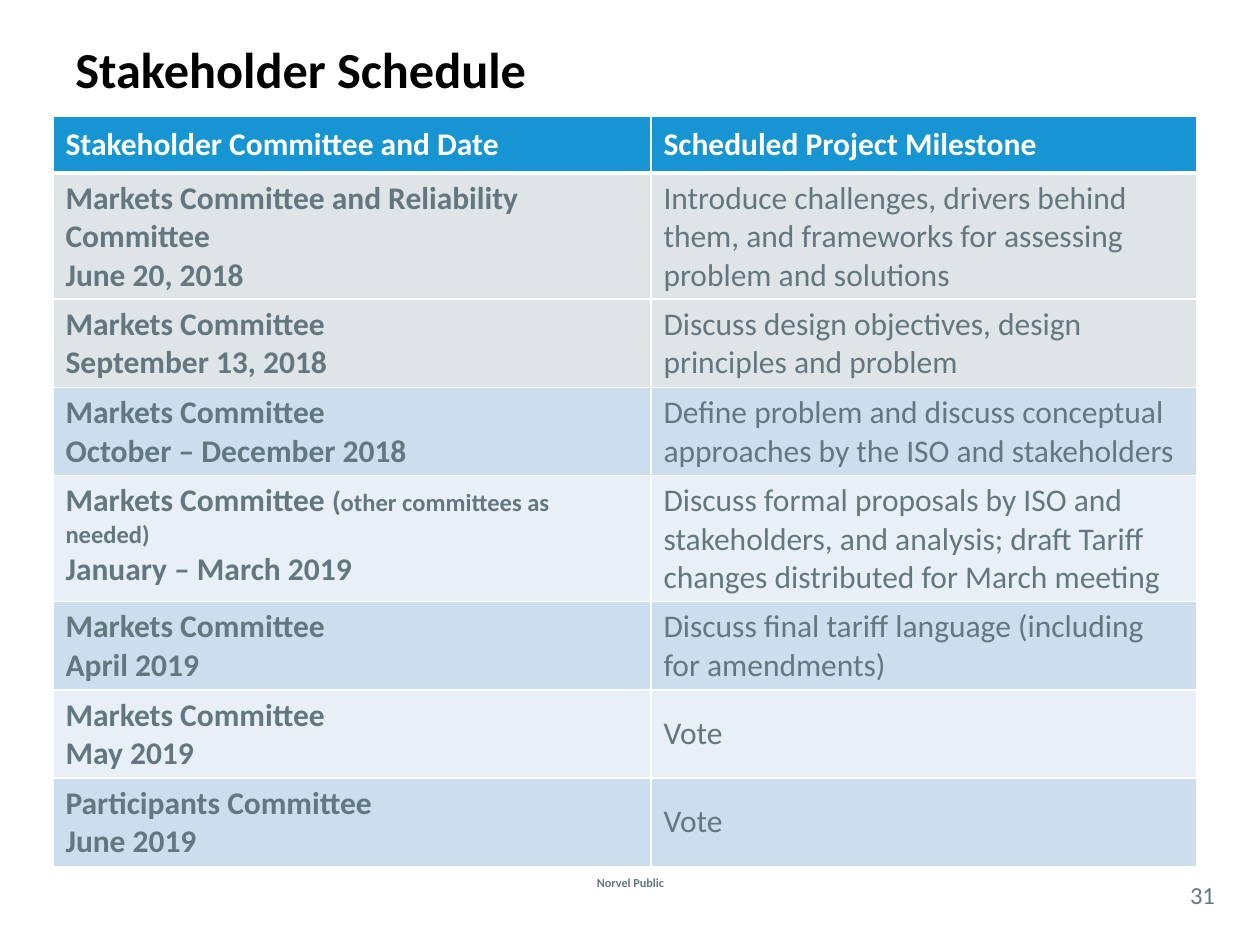
from dataclasses import dataclass

from lxml import etree
from pptx import Presentation, util as u
from pptx.dml.color import RGBColor
from pptx.enum import text
from pptx.oxml import ns

# Content: each line of a cell is a list of (words, size name)
TITLE = "Stakeholder Schedule"
FOOTER = "Norvel Public"
NUMBER = "31"
HEADINGS = ["Stakeholder Committee and Date", "Scheduled Project Milestone"]
MARKETS = [("Markets Committee", "body")]
# (committee lines, date, milestone, fill name, row height in px)
MILESTONES = [
    ([("Markets Committee and Reliability Committee", "body")], "June 20, 2018",
     "Introduce challenges, drivers behind them, and frameworks for assessing "
     "problem and solutions", "past", 123),
    (MARKETS, "September 13, 2018",
     "Discuss design objectives, design principles and problem", "past", 86),
    (MARKETS, "October – December 2018",
     "Define problem and discuss conceptual approaches by the ISO and stakeholders",
     "band", 86),
    ([("Markets Committee ", "body"), ("(", "bracket"),
      ("other committees as needed)", "aside")], "January – March 2019",
     "Discuss formal proposals by ISO and stakeholders, and analysis; draft Tariff "
     "changes distributed for March meeting", "pale", 123),
    (MARKETS, "April 2019",
     "Discuss final tariff language (including for amendments)", "band", 86),
    (MARKETS, "May 2019", "Vote", "pale", 86),
    ([("Participants Committee", "body")], "June 2019", "Vote", "band", 86),
]

# Layout in px
SCALE = u.Inches(1) / 126
PAGE = (1260, 945)
TITLE_AREA = (63, 32, 1134, 73)
FOOTER_AREA = (538, 872, 185, 21)
NUMBER_AREA = (1176, 877, 53, 36)
TABLE_CORNER = (53, 116)
COLUMNS = (598, 546)
HEADER_HEIGHT = 57


@dataclass(frozen=True)
class Theme:
    font: str = "Calibri"
    black: str = "000000"
    white: str = "FFFFFF"
    slate: str = "62777F"
    header: str = "1795D2"
    past: str = "DFE4E6"
    band: str = "CCDDEE"
    pale: str = "E8EFF7"
    title: float = 28.8
    body: float = 18
    bracket: float = 16
    aside: float = 14
    number: float = 14
    footer: float = 7


THEME = Theme()


def px(length):
    return u.Emu(round(length * SCALE))


def write(frame, lines, color="slate", bold=False, align=None):
    for index, line in enumerate(lines):
        para = frame.paragraphs[0] if index == 0 else frame.add_paragraph()
        para.alignment = align
        for words, size in line:
            span = para.add_run()
            span.text = words
            span.font.name = THEME.font
            span.font.size = u.Pt(getattr(THEME, size))
            span.font.bold = bold
            span.font.color.rgb = RGBColor.from_string(getattr(THEME, color))


def add_text(page, area, words, size, inset=None, **style):
    frame = page.shapes.add_textbox(*map(px, area)).text_frame
    frame.word_wrap = True
    frame.vertical_anchor = text.MSO_ANCHOR.MIDDLE
    if inset is not None:
        frame.margin_left = frame.margin_right = inset
        frame.margin_top = frame.margin_bottom = inset
    write(frame, [[(words, size)]], **style)


def set_borders(cell, **widths):
    properties = cell._tc.get_or_add_tcPr()
    for side in "LRTB":
        width = u.Pt(widths.get(side, 1))
        line = etree.SubElement(properties, ns.qn(f"a:ln{side}"), w=str(width))
        fill = etree.SubElement(line, ns.qn("a:solidFill"))
        etree.SubElement(fill, ns.qn("a:srgbClr"), val=THEME.white)


def fill_cell(cell, lines, fill, borders=None, middle=True, **style):
    set_borders(cell, **(borders or {}))
    cell.fill.solid()
    cell.fill.fore_color.rgb = RGBColor.from_string(getattr(THEME, fill))
    anchor = text.MSO_ANCHOR
    cell.vertical_anchor = anchor.MIDDLE if middle else anchor.TOP
    write(cell.text_frame, lines, **style)


def add_schedule(page):
    heights = [HEADER_HEIGHT] + [row[-1] for row in MILESTONES]
    size = (sum(COLUMNS), sum(heights))
    table = page.shapes.add_table(len(heights), len(COLUMNS),
                                  *map(px, TABLE_CORNER + size)).table
    for column, width in zip(table.columns, COLUMNS):
        column.width = px(width)
    for row, height in zip(table.rows, heights):
        row.height = px(height)
    for column, heading in enumerate(HEADINGS):
        fill_cell(table.cell(0, column), [[(heading, "body")]], "header",
                  borders={"B": 3}, color="white", bold=True)
    for row, (committee, date, milestone, fill, _) in enumerate(MILESTONES, 1):
        top = {"T": 3} if row == 1 else None
        fill_cell(table.cell(row, 0), [committee, [(date, "body")]], fill,
                  borders=top, middle=False, bold=True)
        fill_cell(table.cell(row, 1), [[(milestone, "body")]], fill, borders=top)


def main():
    deck = Presentation()
    deck.slide_width, deck.slide_height = map(px, PAGE)
    page = deck.slides.add_slide(deck.slide_layouts[6])
    center = text.PP_ALIGN.CENTER
    add_text(page, FOOTER_AREA, FOOTER, "footer", inset=0, bold=True, align=center)
    add_text(page, TITLE_AREA, TITLE, "title", color="black", bold=True)
    add_text(page, NUMBER_AREA, NUMBER, "number", inset=0, align=center)
    add_schedule(page)
    deck.save("out.pptx")


if __name__ == "__main__":
    main()
